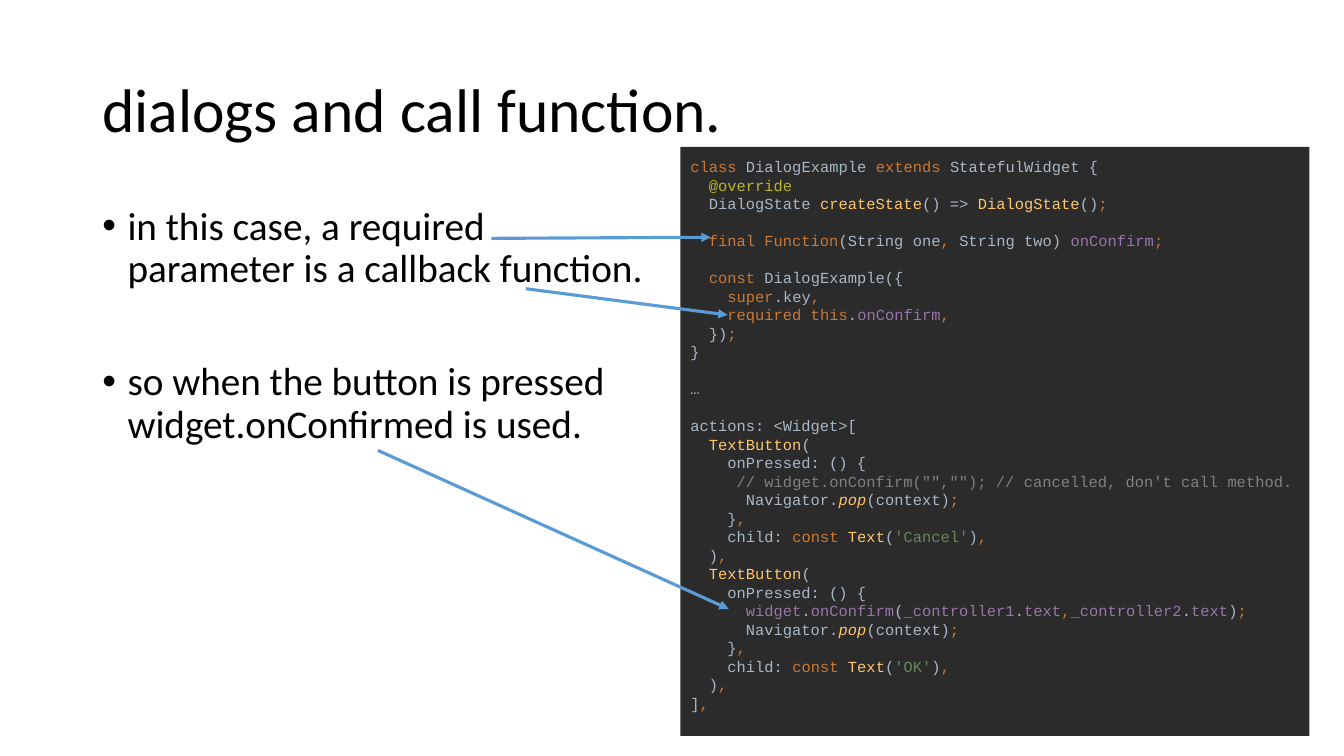
"""Build a slide on passing a callback function to a dialog."""
from dataclasses import dataclass, field

from lxml import etree
from pptx import Presentation
from pptx import util as u
from pptx.dml.color import RGBColor
from pptx.enum import shapes, text
from pptx.oxml.ns import qn

PX = 9525


@dataclass(frozen=True)
class Theme:
    """Colours, fonts and type sizes of the slide."""
    ink: str = "000000"
    panel: str = "2B2B2B"
    arrow: str = "5B9BD5"
    prose_font: str = "Calibri"
    code_font: str = "Courier New"
    title_size: int = 44
    bullet_size: int = 28
    code_size: int = 11
    code_pitch: float = 13.2
    arrow_width: float = 2.25
    tones: dict = field(default_factory=lambda: {
        "k": "CC7832", "p": "A9B7C6", "a": "BBB529", "f": "FFC66D",
        "m": "FFC66D", "v": "9876AA", "c": "808080", "s": "6A8759"})


THEME = Theme()

BULLETS = [
    ("in this case, a required parameter is a callback function.", 0),
    ("so when the button is pressed widget.onConfirmed is used.", 50.5),
]

CODE = [
    """~kclass ~pDialogExample ~kextends ~pStatefulWidget {
  ~a@override
  DialogState ~fcreateState~p() => ~fDialogState~p()~k;

  ~kfinal Function~p(String one~k, ~pString two) ~vonConfirm~k;

  ~kconst ~pDialogExample({
    ~ksuper~p.key~k,
    ~krequired this~p.~vonConfirm~k,
  })~k;
}""",
    "…",
    """actions: <Widget>[
  ~fTextButton~p(
    onPressed: () {
     ~c// widget.onConfirm("",""); // cancelled, don't call method.
      Navigator.~mpop~p(context)~k;
    }~k,
    child: ~kconst ~fText~p(~s'Cancel'~p)~k,
  )~k,
  ~fTextButton~p(
    onPressed: () {
      ~vwidget~p.~vonConfirm~p(~v_controller1~p.~vtext~k,~v_controller2~p.~vtext~p)~k;
      Navigator.~mpop~p(context)~k;
    }~k,
    child: ~kconst ~fText~p(~s'OK'~p)~k,
  )~k,
]~k,""",
]

ARROWS = [
    (468, 227, 677, 226),
    (501, 275, 693, 300),
    (360, 429, 694, 580),
]


def px(*lengths):
    """Turn pixel lengths into EMU."""
    return [u.Emu(length * PX) for length in lengths]


def write(paragraph, content, *, size, color, font=THEME.prose_font, italic=False):
    """Add one formatted run to a paragraph."""
    run = paragraph.add_run()
    run.text = content
    run.font.size = u.Pt(size)
    run.font.name = font
    run.font.italic = italic
    run.font.color.rgb = RGBColor.from_string(color)


def next_paragraph(frame, index):
    """Return the first paragraph of a frame, or add another."""
    return frame.add_paragraph() if index else frame.paragraphs[0]


def set_title(slide, content):
    """Place the title placeholder and fill it."""
    title = slide.shapes.title
    title.left, title.top, title.width, title.height = px(88, 38, 1104, 139)
    frame = title.text_frame
    frame.auto_size = text.MSO_AUTO_SIZE.NONE
    frame.vertical_anchor = text.MSO_ANCHOR.MIDDLE
    heading = frame.paragraphs[0]
    heading.alignment = text.PP_ALIGN.LEFT
    heading.line_spacing = 0.9
    write(heading, content, size=THEME.title_size, color=THEME.ink)


def add_bullets(slide, bullets):
    """Add the bulleted explanation."""
    frame = slide.shapes.add_textbox(*px(88, 192, 544, 457)).text_frame
    frame.word_wrap = True
    for index, (content, gap) in enumerate(bullets):
        bullet = next_paragraph(frame, index)
        bullet.line_spacing = 0.9
        bullet.space_before = u.Pt(gap)
        properties = bullet._p.get_or_add_pPr()
        properties.set("marL", str(24 * PX))
        properties.set("indent", str(-24 * PX))
        etree.SubElement(properties, qn("a:buFont"), typeface="Arial")
        etree.SubElement(properties, qn("a:buChar"), char="•")
        write(bullet, content, size=THEME.bullet_size, color=THEME.ink)


def write_code_line(paragraph, line):
    """Write the spans of a code line, each marked by ~ and a tone letter."""
    for span in ("p" + line).split("~"):
        tone, content = span[0], span[1:]
        if content:
            write(paragraph, content, size=THEME.code_size, font=THEME.code_font,
                  color=THEME.tones[tone], italic=tone == "m")


def add_code_panel(slide, blocks):
    """Add the dark panel with highlighted code."""
    panel = slide.shapes.add_shape(shapes.MSO_SHAPE.RECTANGLE, *px(648, 140, 599, 561))
    panel.shadow.inherit = False
    panel.fill.solid()
    panel.fill.fore_color.rgb = RGBColor.from_string(THEME.panel)
    panel.line.fill.background()
    frame = panel.text_frame
    frame.word_wrap = True
    frame.auto_size = text.MSO_AUTO_SIZE.SHAPE_TO_FIT_TEXT
    frame.vertical_anchor = text.MSO_ANCHOR.MIDDLE
    frame.margin_bottom = u.Pt(13)
    for index, block in enumerate(blocks):
        listing = next_paragraph(frame, index)
        listing.alignment = text.PP_ALIGN.LEFT
        listing.line_spacing = u.Pt(THEME.code_pitch)
        listing.space_before = u.Pt(THEME.code_pitch if index else 0)
        for number, line in enumerate(block.split("\n")):
            if number:
                listing.add_line_break()
            write_code_line(listing, line)


def add_arrow(slide, *ends):
    """Add an arrow from an explanation to its code."""
    arrow = slide.shapes.add_connector(shapes.MSO_CONNECTOR.STRAIGHT, *px(*ends))
    arrow.line.color.rgb = RGBColor.from_string(THEME.arrow)
    arrow.line.width = u.Pt(THEME.arrow_width)
    etree.SubElement(arrow.line._get_or_add_ln(), qn("a:tailEnd"), type="triangle")
    etree.SubElement(arrow._element.spPr, qn("a:effectLst"))


def main():
    """Build and save the slide."""
    deck = Presentation()
    deck.slide_width, deck.slide_height = px(1280, 720)
    slide = deck.slides.add_slide(deck.slide_layouts[5])
    set_title(slide, "dialogs and call function.")
    add_bullets(slide, BULLETS)
    add_code_panel(slide, CODE)
    for ends in ARROWS:
        add_arrow(slide, *ends)
    deck.save("out.pptx")


if __name__ == "__main__":
    main()
